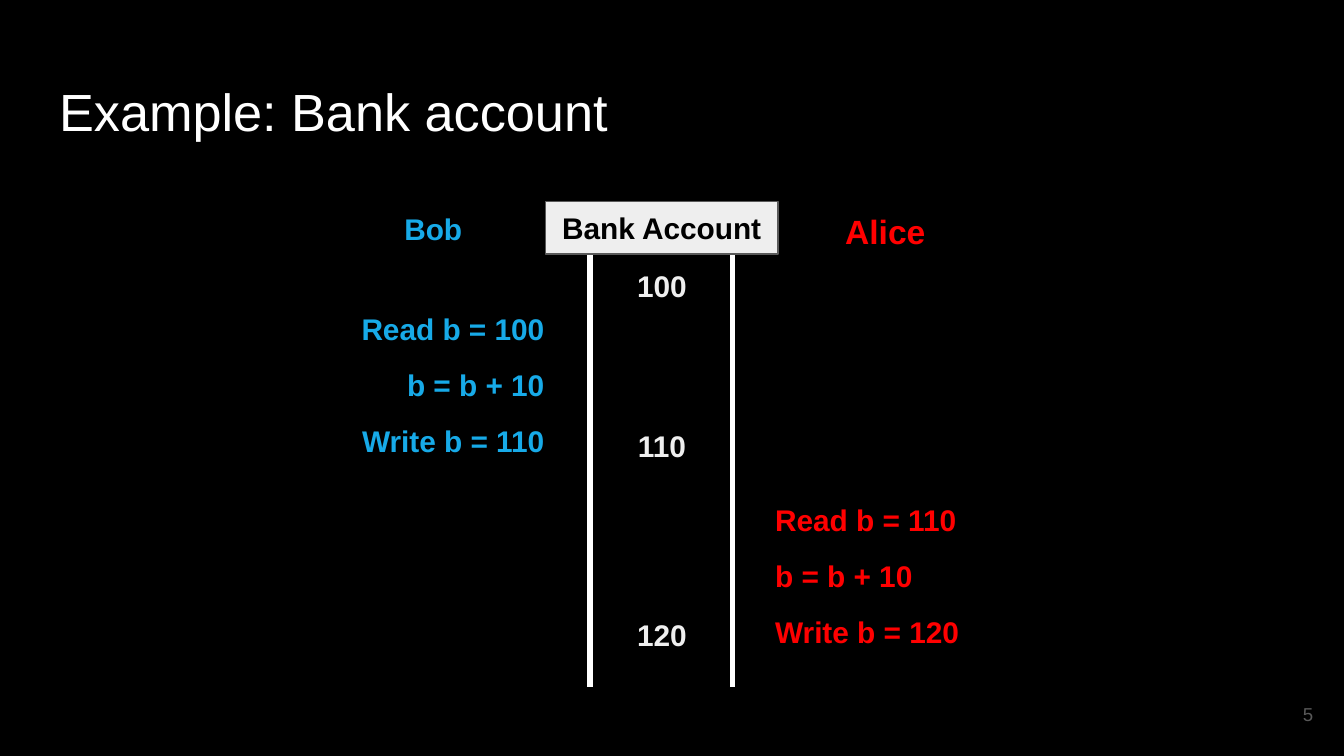
from dataclasses import dataclass

from lxml import etree
from pptx import Presentation
from pptx.dml.color import RGBColor
from pptx.enum.shapes import MSO_CONNECTOR, MSO_SHAPE
from pptx.enum.text import MSO_ANCHOR, MSO_AUTO_SIZE, PP_ALIGN
from pptx.oxml.ns import qn
from pptx.shapes.base import BaseShape
from pptx.slide import Slide
from pptx.util import Pt

LEFT, CENTER, RIGHT = PP_ALIGN.LEFT, PP_ALIGN.CENTER, PP_ALIGN.RIGHT
TOP, MIDDLE = MSO_ANCHOR.TOP, MSO_ANCHOR.MIDDLE
FIXED_SIZE = MSO_AUTO_SIZE.NONE
STRAIGHT = MSO_CONNECTOR.STRAIGHT
PROCESS = MSO_SHAPE.FLOWCHART_PROCESS
TITLE_ONLY = 5


@dataclass(frozen=True)
class Theme:
    font: str = "Arial"
    background: str = "000000"
    title: str = "FFFFFF"
    rail: str = "FFFFFF"
    bob: str = "17AAE8"
    alice: str = "FF0000"
    balance: str = "EFEFEF"
    account_fill: str = "EEEEEE"
    account_text: str = "000000"
    muted: str = "595959"
    title_size: float = 28
    name_size: float = 18
    body_size: float = 16
    number_size: float = 10
    inset: float = 7.2


@dataclass(frozen=True)
class Frame:
    left: float
    top: float
    width: float
    height: float


@dataclass(frozen=True)
class Person:
    name: str
    name_frame: Frame
    name_size: float
    color: str
    steps: tuple[str, ...]
    steps_left: float
    steps_top: float
    align: PP_ALIGN


THEME = Theme()
STEP_GAP = 30
STEP_WIDTH, STEP_HEIGHT = 124.6, 32.4
ACCOUNT = Frame(292.2, 108, 124.6, 28.1)
RAIL_TOP, RAIL_BOTTOM = 130.3, 367.9
RAILS = (316.1, 392.4)
BALANCES = (("100", 136.1), ("110", 221.8), ("120", 323.3))
BALANCE_LEFT, BALANCE_WIDTH, BALANCE_HEIGHT = 327.6, 54, 28.1
PEOPLE = (
    Person("Bob", Frame(209.5, 105.8, 54, 32.4), THEME.body_size, THEME.bob,
           ("Read b = 100", "b = b + 10", "Write b = 110"), 174.2, 159.2, RIGHT),
    Person("Alice", Frame(445.7, 105.8, 69.8, 32.4), THEME.name_size, THEME.alice,
           ("Read b = 110", "b = b + 10", "Write b = 120"), 408.2, 261.4, LEFT),
)


def rgb(color: str) -> RGBColor:
    return RGBColor.from_string(color)


def place(shape: BaseShape, frame: Frame) -> None:
    shape.left, shape.top = Pt(frame.left), Pt(frame.top)
    shape.width, shape.height = Pt(frame.width), Pt(frame.height)


def write_text(shape: BaseShape, text: str, *, color: str,
               size: float = THEME.body_size, bold: bool = True,
               align: PP_ALIGN = LEFT, anchor: MSO_ANCHOR = TOP) -> None:
    box = shape.text_frame
    box.word_wrap = True
    box.auto_size = FIXED_SIZE
    box.vertical_anchor = anchor
    box.margin_left = box.margin_right = Pt(THEME.inset)
    box.margin_top = box.margin_bottom = Pt(THEME.inset)
    para = box.paragraphs[0]
    para.alignment = align
    para.line_spacing = 1.0
    span = para.add_run()
    span.text = text
    span.font.name = THEME.font
    span.font.size = Pt(size)
    span.font.bold = bold
    span.font.color.rgb = rgb(color)


def add_label(page: Slide, frame: Frame, text: str, **style) -> None:
    label = page.shapes.add_textbox(0, 0, 0, 0)
    place(label, frame)
    write_text(label, text, **style)


def add_rail(page: Slide, x: float) -> None:
    rail = page.shapes.add_connector(
        STRAIGHT, Pt(x), Pt(RAIL_TOP), Pt(x), Pt(RAIL_BOTTOM))
    rail.line.color.rgb = rgb(THEME.rail)
    rail.line.width = Pt(3)
    etree.SubElement(rail._element.spPr, qn("a:effectLst"))


def add_account(page: Slide) -> None:
    account = page.shapes.add_shape(PROCESS, 0, 0, 0, 0)
    place(account, ACCOUNT)
    account.shadow.inherit = False
    account.fill.solid()
    account.fill.fore_color.rgb = rgb(THEME.account_fill)
    account.line.color.rgb = rgb(THEME.muted)
    account.line.width = Pt(0.75)
    write_text(account, "Bank Account", color=THEME.account_text,
               align=CENTER, anchor=MIDDLE)


def add_person(page: Slide, person: Person) -> None:
    add_label(page, person.name_frame, person.name,
              color=person.color, size=person.name_size)
    for index, step in enumerate(person.steps):
        frame = Frame(person.steps_left, person.steps_top + index * STEP_GAP,
                      STEP_WIDTH, STEP_HEIGHT)
        add_label(page, frame, step, color=person.color, align=person.align)


def main() -> None:
    deck = Presentation()
    deck.slide_width, deck.slide_height = Pt(720), Pt(405)
    page = deck.slides.add_slide(deck.slide_layouts[TITLE_ONLY])
    page.background.fill.solid()
    page.background.fill.fore_color.rgb = rgb(THEME.background)

    title = page.shapes.title
    place(title, Frame(24.5, 35.3, 671, 45.4))
    write_text(title, "Example: Bank account", color=THEME.title,
               size=THEME.title_size, bold=False)

    for x in RAILS:
        add_rail(page, x)
    add_account(page)
    for person in PEOPLE:
        add_person(page, person)
    for amount, top in BALANCES:
        frame = Frame(BALANCE_LEFT, top, BALANCE_WIDTH, BALANCE_HEIGHT)
        add_label(page, frame, amount, color=THEME.balance, align=CENTER)
    add_label(page, Frame(667.4, 367.2, 43.2, 31), "5", color=THEME.muted,
              size=THEME.number_size, bold=False, align=RIGHT, anchor=MIDDLE)

    deck.save("out.pptx")


if __name__ == "__main__":
    main()
